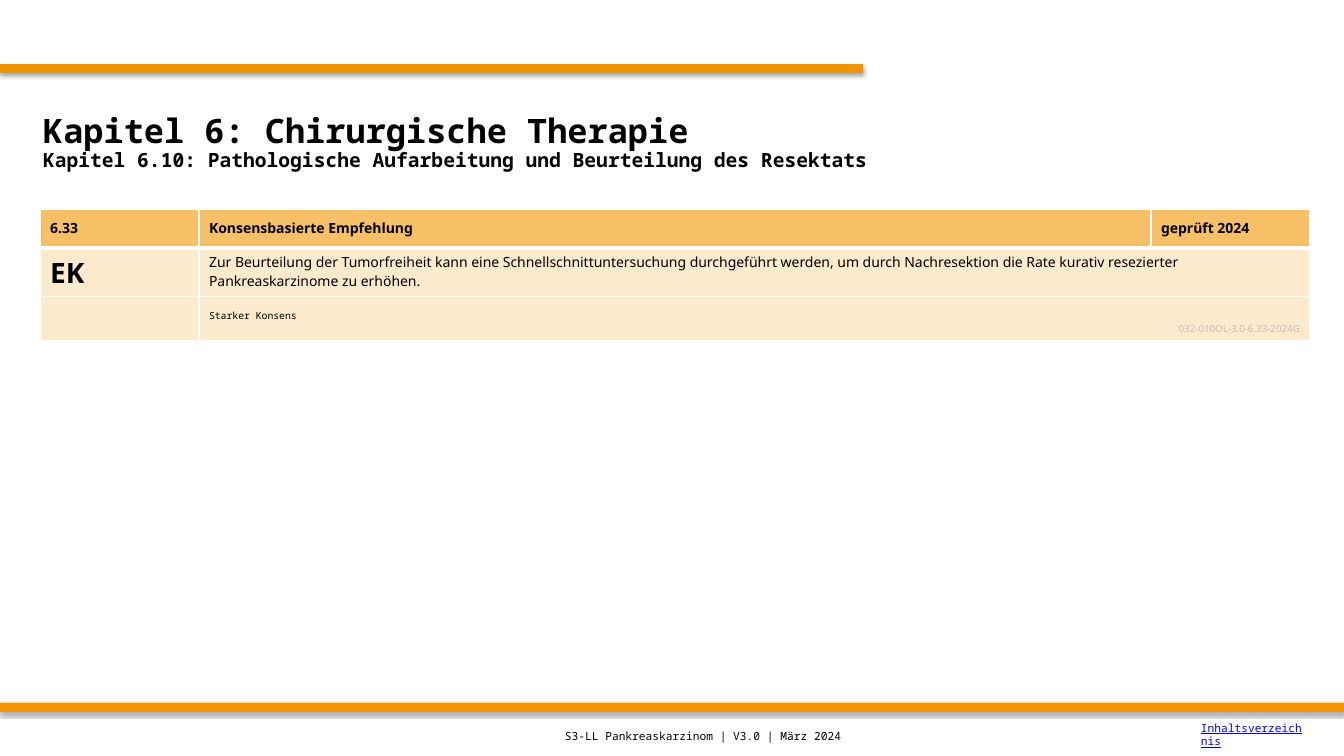
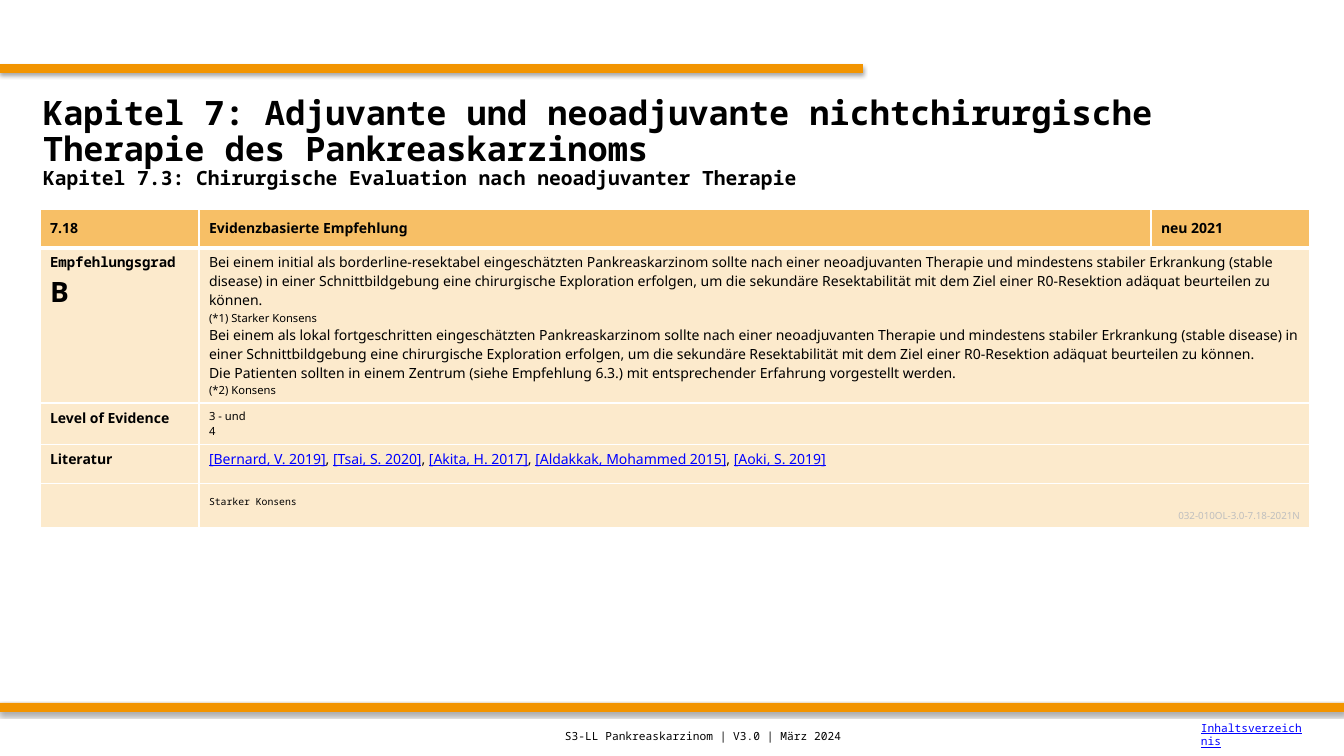
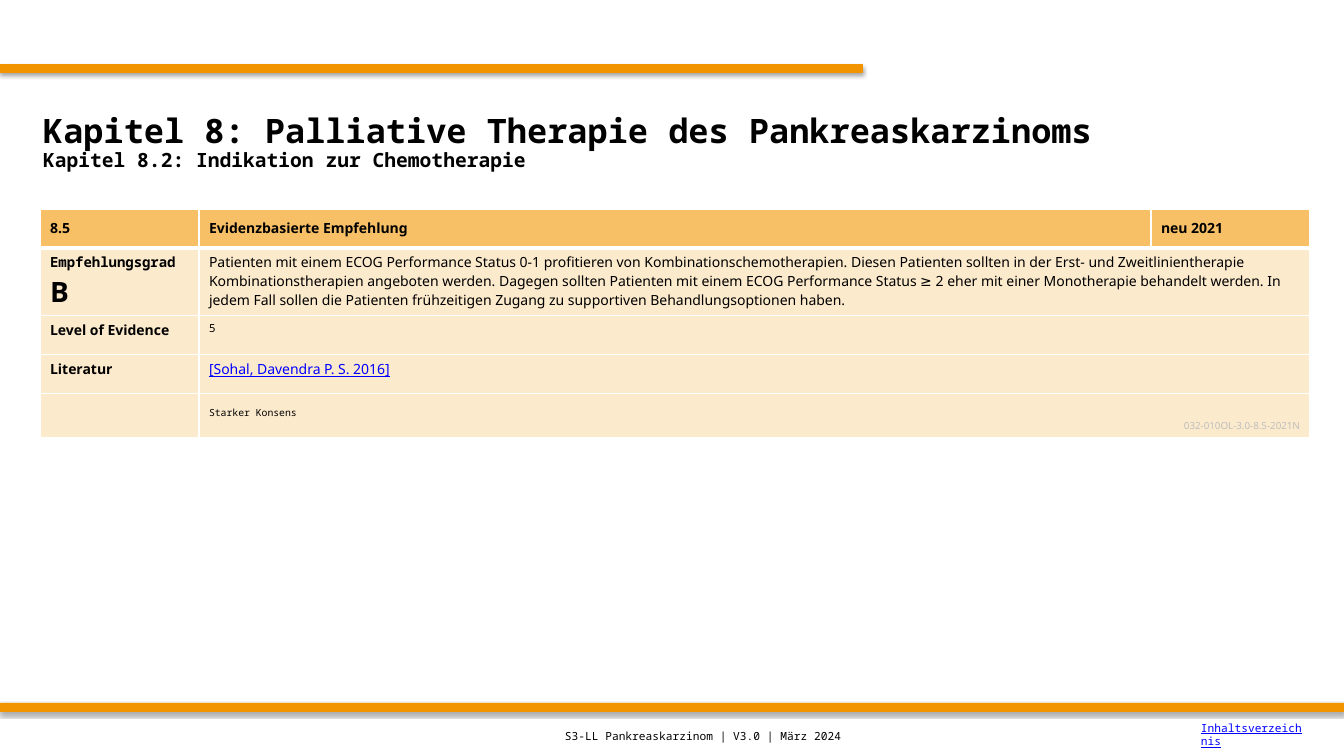
"""Build three guideline slides with recommendation tables."""
from dataclasses import dataclass

from lxml import etree
from pptx import Presentation
from pptx.dml.color import RGBColor
from pptx.enum.shapes import MSO_SHAPE
from pptx.enum.text import MSO_ANCHOR, MSO_AUTO_SIZE, PP_ALIGN
from pptx.oxml.ns import qn
from pptx.util import Emu, Pt

RECTANGLE = MSO_SHAPE.RECTANGLE
TOP, MIDDLE, BOTTOM = MSO_ANCHOR.TOP, MSO_ANCHOR.MIDDLE, MSO_ANCHOR.BOTTOM
LEFT, RIGHT = PP_ALIGN.LEFT, PP_ALIGN.RIGHT
NO_AUTOFIT = MSO_AUTO_SIZE.NONE
TITLE_ONLY = 5
EMU_PER_PX = 914400 / 100.8


@dataclass(frozen=True)
class Theme:
    sans: str = "Noto Sans"
    mono: str = "Noto Sans Mono"
    black: str = "000000"
    white: str = "FFFFFF"
    band: str = "F29400"
    header: str = "F7BF66"
    body: str = "FCEACC"
    link: str = "0000FF"
    muted: str = "BFBFBF"
    title_size: int = 24
    grade_size: int = 20
    subtitle_size: int = 14
    body_size: int = 10
    small_size: int = 8
    tiny_size: int = 7


THEME = Theme()


@dataclass(frozen=True)
class Style:
    size: int = THEME.body_size
    font: str = THEME.sans
    color: str = THEME.black
    bold: bool = False
    underline: bool = False
    align: PP_ALIGN = LEFT


TITLE = Style(THEME.title_size, THEME.mono, bold=True)
SUBTITLE = Style(THEME.subtitle_size, THEME.mono, bold=True)
BODY = Style()
LABEL = Style(bold=True)
MONO_LABEL = Style(font=THEME.mono, bold=True)
GRADE = Style(THEME.grade_size, bold=True)
SMALL = Style(THEME.small_size)
CITATION = Style(color=THEME.link, underline=True)
CONSENSUS = Style(THEME.tiny_size, THEME.mono)
CODE = Style(THEME.tiny_size, color=THEME.muted, align=RIGHT)
FOOTER = Style(THEME.small_size, THEME.mono)
CONTENTS_LINK = Style(THEME.small_size, THEME.mono, THEME.link, underline=True)

TABLE_LEFT, TABLE_TOP = 40, 209
COLUMN_WIDTHS = (159, 952, 159)
ROW_HEIGHT, CONSENSUS_HEIGHT = 39, 44

SLIDES = [
    {
        "title": "Kapitel 6: Chirurgische Therapie",
        "subtitle": "Kapitel 6.10: Pathologische Aufarbeitung und Beurteilung des Resektats",
        "header": ("6.33", "Konsensbasierte Empfehlung", "geprüft 2024"),
        "grade": [("EK", GRADE)],
        "statement": [
            ("Zur Beurteilung der Tumorfreiheit kann eine Schnellschnittuntersuchung durchgeführt werden, "
             "um durch Nachresektion die Rate kurativ resezierter Pankreaskarzinome zu erhöhen.", BODY),
        ],
        "evidence": (),
        "literature": (),
        "code": "032-010OL-3.0-6.33-2024G",
    },
    {
        "title": "Kapitel 7: Adjuvante und neoadjuvante nichtchirurgische Therapie des Pankreaskarzinoms",
        "subtitle": "Kapitel 7.3: Chirurgische Evaluation nach neoadjuvanter Therapie",
        "header": ("7.18", "Evidenzbasierte Empfehlung", "neu 2021"),
        "grade": [("Empfehlungsgrad", MONO_LABEL), ("B", GRADE)],
        "statement": [
            ("Bei einem initial als borderline-resektabel eingeschätzten Pankreaskarzinom sollte nach einer "
             "neoadjuvanten Therapie und mindestens stabiler Erkrankung (stable disease) in einer "
             "Schnittbildgebung eine chirurgische Exploration erfolgen, um die sekundäre Resektabilität "
             "mit dem Ziel einer R0-Resektion adäquat beurteilen zu können.", BODY),
            ("(*1) Starker Konsens", SMALL),
            ("Bei einem als lokal fortgeschritten eingeschätzten Pankreaskarzinom sollte nach einer "
             "neoadjuvanten Therapie und mindestens stabiler Erkrankung (stable disease) in einer "
             "Schnittbildgebung eine chirurgische Exploration erfolgen, um die sekundäre Resektabilität "
             "mit dem Ziel einer R0-Resektion adäquat beurteilen zu können.", BODY),
            ("Die Patienten sollten in einem Zentrum (siehe Empfehlung 6.3.) mit entsprechender "
             "Erfahrung vorgestellt werden.", BODY),
            ("(*2) Konsens", SMALL),
        ],
        "evidence": ("3 - und", "4"),
        "literature": ("[Bernard, V. 2019]", "[Tsai, S. 2020]", "[Akita, H. 2017]",
                       "[Aldakkak, Mohammed 2015]", "[Aoki, S. 2019]"),
        "code": "032-010OL-3.0-7.18-2021N",
    },
    {
        "title": "Kapitel 8: Palliative Therapie des Pankreaskarzinoms",
        "subtitle": "Kapitel 8.2: Indikation zur Chemotherapie",
        "header": ("8.5", "Evidenzbasierte Empfehlung", "neu 2021"),
        "grade": [("Empfehlungsgrad", MONO_LABEL), ("B", GRADE)],
        "statement": [
            ("Patienten mit einem ECOG Performance Status 0-1 profitieren von Kombinationschemotherapien. "
             "Diesen Patienten sollten in der Erst- und Zweitlinientherapie Kombinationstherapien angeboten "
             "werden. Dagegen sollten Patienten mit einem ECOG Performance Status ≥ 2 eher mit einer "
             "Monotherapie behandelt werden. In jedem Fall sollen die Patienten frühzeitigen Zugang zu "
             "supportiven Behandlungsoptionen haben.", BODY),
        ],
        "evidence": ("5",),
        "literature": ("[Sohal, Davendra P. S. 2016]",),
        "code": "032-010OL-3.0-8.5-2021N",
    },
]


def px(length):
    return Emu(round(length * EMU_PER_PX))


def box(*lengths):
    return [px(length) for length in lengths]


def write_runs(paragraph, runs):
    paragraph.alignment = runs[0][1].align
    for text, style in runs:
        run = paragraph.add_run()
        run.text = text
        font = run.font
        font.name, font.size = style.font, Pt(style.size)
        font.bold, font.underline = style.bold, style.underline
        font.color.rgb = RGBColor.from_string(style.color)


def write_paragraphs(text_frame, paragraphs):
    for index, runs in enumerate(paragraphs):
        paragraph = text_frame.add_paragraph() if index else text_frame.paragraphs[0]
        write_runs(paragraph, runs)


def single_runs(lines):
    return [[line] for line in lines]


def add_master_bands(presentation, slide):
    master_tree = presentation.slide_master.shapes.element
    for number, (top, width) in enumerate(((64, 863), (703, 1344))):
        band = slide.shapes.add_shape(RECTANGLE, *box(0, top, width, 9))
        band.name = f"Band {number + 1}"
        band.fill.solid()
        band.fill.fore_color.rgb = RGBColor.from_string(THEME.band)
        band.line.fill.background()
        band.element.nvSpPr.cNvPr.set("id", str(100 + number))
        master_tree.append(band.element)


def set_title(slide, title, subtitle):
    shape = slide.shapes.title
    shape.left, shape.top, shape.width, shape.height = box(33, 84, 1277, 118)
    text_frame = shape.text_frame
    text_frame.auto_size = NO_AUTOFIT
    text_frame.vertical_anchor = MIDDLE
    write_paragraphs(text_frame, single_runs([(title, TITLE), (subtitle, SUBTITLE)]))
    for paragraph in text_frame.paragraphs:
        paragraph.line_spacing = 0.9
        paragraph.space_before = Pt(0)


def add_label(slide, bounds, text, style):
    text_frame = slide.shapes.add_textbox(*box(*bounds)).text_frame
    text_frame.word_wrap = True
    text_frame.vertical_anchor = MIDDLE
    write_paragraphs(text_frame, [[(text, style)]])


def set_header_borders(cell):
    properties = cell._tc.get_or_add_tcPr()
    for side, points in (("L", 1), ("R", 1), ("T", 1), ("B", 3)):
        line = etree.SubElement(properties, qn(f"a:ln{side}"), w=str(Pt(points)))
        fill = etree.SubElement(line, qn("a:solidFill"))
        etree.SubElement(fill, qn("a:srgbClr"), val=THEME.white)


def fill_cell(cell, color, paragraphs, anchor=TOP):
    cell.fill.solid()
    cell.fill.fore_color.rgb = RGBColor.from_string(color)
    cell.vertical_anchor = anchor
    write_paragraphs(cell.text_frame, paragraphs)


def citation_runs(citations):
    runs = []
    for citation in citations:
        if runs:
            runs.append((", ", BODY))
        runs.append((citation, CITATION))
    return runs


def body_rows(content):
    rows = [(single_runs(content["grade"]), single_runs(content["statement"]), TOP)]
    if content["evidence"]:
        levels = [[(level, SMALL)] for level in content["evidence"]]
        rows.append(([[("Level of Evidence", LABEL)]], levels, TOP))
    if content["literature"]:
        rows.append(([[("Literatur", LABEL)]], [citation_runs(content["literature"])], TOP))
    consensus = single_runs([("Starker Konsens", CONSENSUS), (content["code"], CODE)])
    rows.append(([], consensus, BOTTOM))
    return rows


def add_recommendation(slide, content):
    rows = body_rows(content)
    heights = [ROW_HEIGHT] * len(rows) + [CONSENSUS_HEIGHT]
    bounds = box(TABLE_LEFT, TABLE_TOP, sum(COLUMN_WIDTHS), sum(heights))
    table = slide.shapes.add_table(len(heights), len(COLUMN_WIDTHS), *bounds).table
    table.horz_banding = False
    for column, width in zip(table.columns, COLUMN_WIDTHS):
        column.width = px(width)
    for row, height in zip(table.rows, heights):
        row.height = px(height)
    for column, text in enumerate(content["header"]):
        cell = table.cell(0, column)
        set_header_borders(cell)
        fill_cell(cell, THEME.header, [[(text, LABEL)]], MIDDLE)
    for index, (label, paragraphs, anchor) in enumerate(rows, start=1):
        table.cell(index, 1).merge(table.cell(index, 2))
        fill_cell(table.cell(index, 0), THEME.body, label)
        fill_cell(table.cell(index, 1), THEME.body, paragraphs, anchor)


def add_footer(slide):
    add_label(slide, (555, 717, 555, 39), "S3-LL Pankreaskarzinom | V3.0 | März 2024", FOOTER)
    add_label(slide, (1191, 715, 123, 39), "Inhaltsverzeichnis", CONTENTS_LINK)


def main():
    presentation = Presentation()
    presentation.slide_width, presentation.slide_height = box(1344, 756)
    for index, content in enumerate(SLIDES):
        slide = presentation.slides.add_slide(presentation.slide_layouts[TITLE_ONLY])
        if index == 0:
            add_master_bands(presentation, slide)
        set_title(slide, content["title"], content["subtitle"])
        add_recommendation(slide, content)
        add_footer(slide)
    presentation.save("out.pptx")


if __name__ == "__main__":
    main()
